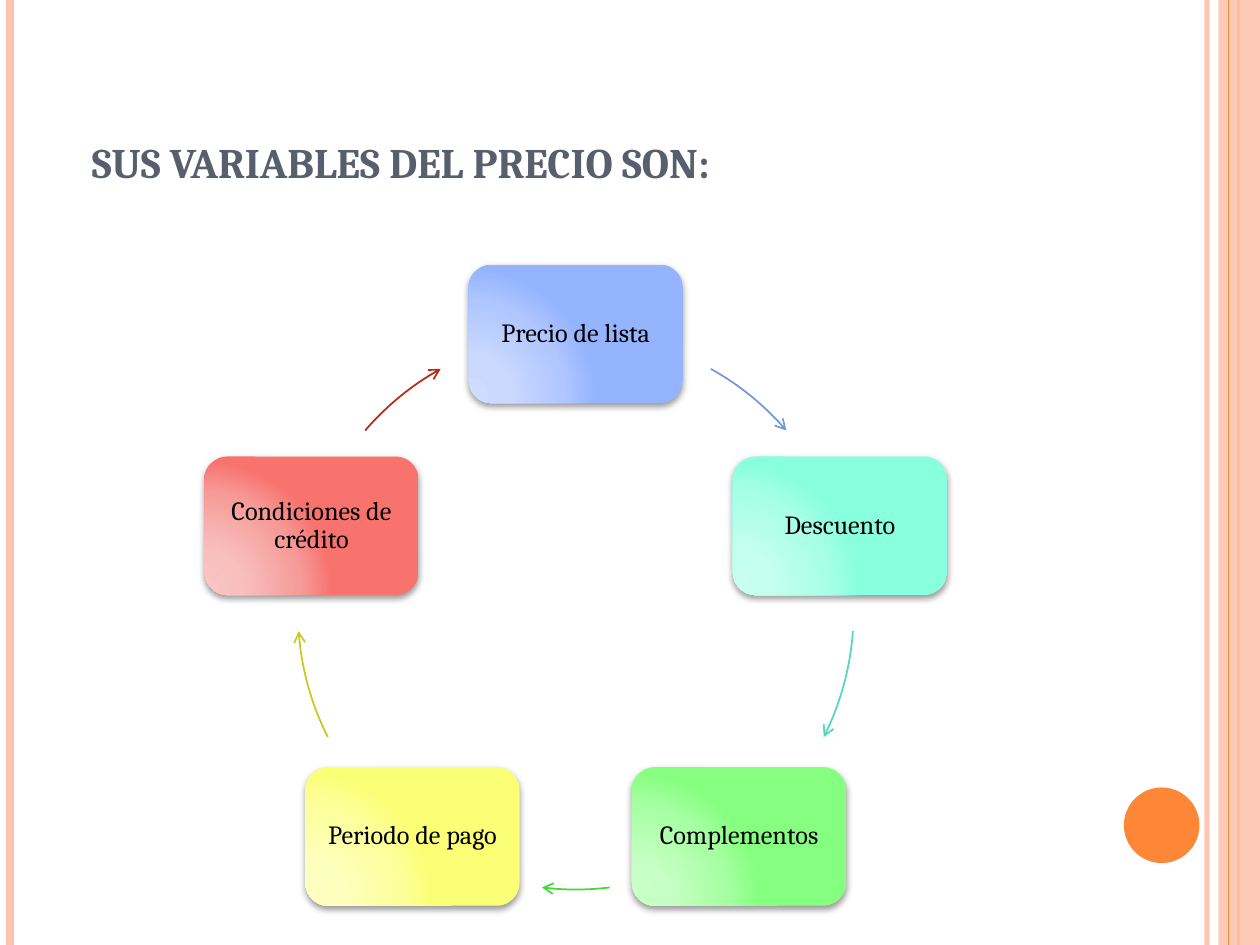
from math import cos, radians, sin

from lxml.etree import SubElement
from pptx import Presentation
from pptx.dml.color import RGBColor
from pptx.enum.shapes import MSO_CONNECTOR, MSO_SHAPE
from pptx.enum.text import MSO_ANCHOR, PP_ALIGN
from pptx.oxml import parse_xml
from pptx.oxml.ns import nsdecls, qn
from pptx.util import Inches, Pt

COLORS = {"peach": "FEC3AE", "orange": "FE8637", "title": "575F6D", "text": "000000"}
FONT = "Cambria"
TITLE = "sus variables del precio son:"

# Label, gradient from light to full, arrow colour, arrow start and end angle
# (degrees clockwise from the top of the cycle)
STEPS = [
    ("Precio de lista", ("CFDCFF", "CBD9FF", "AFC6FF", "95B4FF"), "7598D9", 29.1, 49.3),
    ("Descuento", ("CAFFEF", "C5FFED", "A7FFE5", "88FFDD"), "55D7BA", 94, 116.8),
    ("Complementos", ("CAFFC8", "C5FFC3", "A6FFA2", "86FF80"), "45D834", 173, 187),
    ("Periodo de pago", ("FDFFC3", "FDFFBD", "FCFF9A", "FBFF75"), "C7CA20", 243.2, 266),
    ("Condiciones de crédito", ("F8C5C3", "F8BFBD", "F69B98", "F8736E"), "B32C16", 310.7, 330.9),
]
GRADIENT_STOPS = (0, 30, 75, 100)
CENTER_X, CENTER_Y, RADIUS = 4.57, 4.855, 2.205
BOX_W, BOX_H = 1.7, 1.1
ARC_SEGMENTS = 16

# x, width in points, colour, opacity in percent
OUTER_RULES = [(9.58, 3, "peach", 93), (0.08, 4.5, "peach", 100), (9.83, 1.5, "orange", 100)]
INNER_RULE = (9.75, 0.75, "orange", 100)


def rgb(value):
    return RGBColor.from_string(value)


def set_opacity(parent, percent):
    for color in parent.iter(qn("a:srgbClr")):
        SubElement(color, qn("a:alpha"), val=str(percent * 1000))


def add_rule(slide, x, width, color, opacity):
    rule = slide.shapes.add_connector(
        MSO_CONNECTOR.STRAIGHT, Inches(x), 0, Inches(x), Inches(7.5))
    rule.line.color.rgb = rgb(COLORS[color])
    rule.line.width = Pt(width)
    properties = rule._element.spPr
    if opacity < 100:
        set_opacity(properties, opacity)
    SubElement(properties, qn("a:effectLst"))


def add_plain(slide, kind, box, color):
    shape = slide.shapes.add_shape(kind, *map(Inches, box))
    shape.shadow.inherit = False
    shape.fill.solid()
    shape.fill.fore_color.rgb = rgb(COLORS[color])
    shape.line.fill.background()
    return shape


def write(frame, text, frame_format, paragraph_format, font_format, color):
    for name, value in frame_format.items():
        setattr(frame, name, value)
    paragraph = frame.paragraphs[0]
    for name, value in paragraph_format.items():
        setattr(paragraph, name, value)
    run = paragraph.add_run()
    run.text = text
    for name, value in font_format.items():
        setattr(run.font, name, value)
    run.font.color.rgb = rgb(COLORS[color])
    return run


def on_cycle(angle):
    """Point in inches at an angle in degrees clockwise from the top."""
    turn = radians(angle)
    return CENTER_X + RADIUS * sin(turn), CENTER_Y - RADIUS * cos(turn)


def add_step(slide, label, gradient, angle):
    x, y = on_cycle(angle)
    step = slide.shapes.add_shape(
        MSO_SHAPE.ROUNDED_RECTANGLE, Inches(x - BOX_W / 2), Inches(y - BOX_H / 2),
        Inches(BOX_W), Inches(BOX_H))
    step.line.fill.background()
    step.shadow.inherit = False
    stops = "".join(
        f'<a:gs pos="{position * 1000}"><a:srgbClr val="{color}"/></a:gs>'
        for position, color in zip(GRADIENT_STOPS, gradient))
    properties = step._element.spPr
    properties.find(qn("a:prstGeom")).addnext(parse_xml(
        f'<a:gradFill {nsdecls("a")} rotWithShape="1"><a:gsLst>{stops}</a:gsLst>'
        '<a:path path="circle"><a:fillToRect l="5000" t="100000" r="120000" b="10000"/>'
        '</a:path></a:gradFill>'))
    shadow = SubElement(
        properties.find(qn("a:effectLst")), qn("a:outerShdw"), blurRad=str(Pt(4)),
        dist=str(Pt(2)), dir="5400000", rotWithShape="0")
    SubElement(shadow, qn("a:srgbClr"), val="000000")
    set_opacity(shadow, 40)
    margins = {f"margin_{side}": Inches(0.11) for side in ("left", "right", "top", "bottom")}
    write(step.text_frame, label,
          {"word_wrap": True, "vertical_anchor": MSO_ANCHOR.MIDDLE, **margins},
          {"alignment": PP_ALIGN.CENTER, "line_spacing": 0.9},
          {"name": FONT, "size": Pt(15)}, "text")


def add_arc_arrow(slide, color, start, end):
    points = [
        tuple(map(Inches, on_cycle(start + (end - start) * i / ARC_SEGMENTS)))
        for i in range(ARC_SEGMENTS + 1)]
    builder = slide.shapes.build_freeform(*points[0])
    builder.add_line_segments(points[1:], close=False)
    arrow = builder.convert_to_shape()
    arrow.shadow.inherit = False
    arrow.fill.background()
    arrow.line.color.rgb = rgb(color)
    arrow.line.width = Pt(1)
    SubElement(arrow._element.spPr.find(qn("a:ln")), qn("a:tailEnd"), type="arrow")


def main():
    deck = Presentation()
    deck.slide_width, deck.slide_height = Inches(10), Inches(7.5)
    slide = deck.slides.add_slide(deck.slide_layouts[6])

    for rule in OUTER_RULES:
        add_rule(slide, *rule)
    band = add_plain(slide, MSO_SHAPE.RECTANGLE, (9.67, 0, 0.33, 7.5), "peach")
    set_opacity(band._element.spPr, 87)
    add_rule(slide, *INNER_RULE)
    add_plain(slide, MSO_SHAPE.OVAL, (8.92, 6.25, 0.6, 0.6), "orange")

    title = slide.shapes.add_textbox(*map(Inches, (0.5, 0.68, 8.17, 0.87)))
    heading = write(title.text_frame, TITLE,
                    {"word_wrap": True, "vertical_anchor": MSO_ANCHOR.BOTTOM,
                     "margin_left": Inches(0.23)},
                    {}, {"name": FONT, "size": Pt(30), "bold": True}, "title")
    heading.font._element.set("cap", "small")

    for index, (label, gradient, arrow_color, start, end) in enumerate(STEPS):
        add_step(slide, label, gradient, index * 360 / len(STEPS))
        add_arc_arrow(slide, arrow_color, start, end)

    deck.save("out.pptx")


if __name__ == "__main__":
    main()
